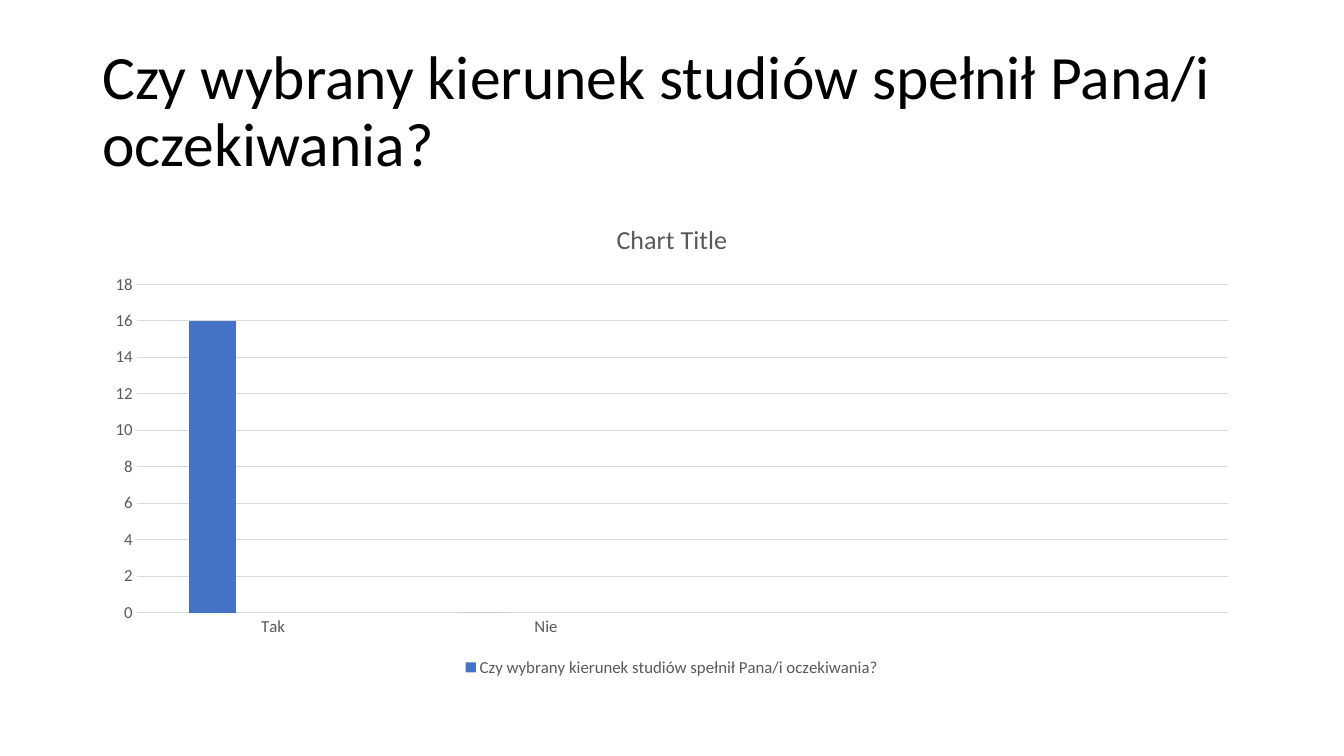
from lxml.etree import SubElement
from pptx import Presentation
from pptx.chart.data import CategoryChartData
from pptx.dml.color import RGBColor
from pptx.enum.chart import XL_CHART_TYPE, XL_LEGEND_POSITION, XL_TICK_MARK
from pptx.enum.text import MSO_ANCHOR
from pptx.oxml.ns import qn
from pptx.util import Emu, Pt

BLACK = RGBColor(0x00, 0x00, 0x00)
GRAY = RGBColor(0x59, 0x59, 0x59)
LIGHT_GRAY = RGBColor(0xD9, 0xD9, 0xD9)
BLUE = RGBColor(0x44, 0x72, 0xC4)
ORANGE = RGBColor(0xED, 0x7D, 0x31)
SILVER = RGBColor(0xA5, 0xA5, 0xA5)

FONT = "Calibri"
QUESTION = "Czy wybrany kierunek studiów spełnił Pana/i oczekiwania?"
CHART_TITLE = "Chart Title"
ANSWERS = ["Tak", "Nie", "", ""]
SERIES = [
    (QUESTION, [16, 0, None, None], BLUE),
    ("Series 2", [None] * 4, ORANGE),
    ("Series 3", [None] * 4, SILVER),
]
HIDDEN_IN_LEGEND = [1, 2]

EMU_PER_PX = 9525
SLIDE_SIZE = (1280, 720)
QUESTION_BOX = (88, 38, 1104, 139)
CHART_BOX = (88, 192, 1104, 457)


def px(lengths):
    return [Emu(length * EMU_PER_PX) for length in lengths]


def style_font(font, size, color):
    font.name = FONT
    font.size = Pt(size)
    font.bold = False
    font.color.rgb = color


def style_line(line):
    line.color.rgb = LIGHT_GRAY
    line.width = Pt(0.75)


def add_question(slide):
    frame = slide.shapes.add_textbox(*px(QUESTION_BOX)).text_frame
    frame.word_wrap = True
    frame.vertical_anchor = MSO_ANCHOR.MIDDLE
    frame.text = QUESTION
    paragraph = frame.paragraphs[0]
    paragraph.line_spacing = 0.9
    style_font(paragraph.runs[0].font, 44, BLACK)


def add_legend(chart):
    chart.has_legend = True
    legend = chart.legend
    legend.position = XL_LEGEND_POSITION.BOTTOM
    legend.include_in_layout = False
    style_font(legend.font, 12, GRAY)
    position = legend._element.find(qn("c:legendPos"))
    for index in reversed(HIDDEN_IN_LEGEND):
        entry = SubElement(legend._element, qn("c:legendEntry"))
        SubElement(entry, qn("c:idx")).set("val", str(index))
        SubElement(entry, qn("c:delete")).set("val", "1")
        position.addnext(entry)


def add_answer_chart(slide):
    answers = CategoryChartData()
    answers.categories = ANSWERS
    for name, counts, _ in SERIES:
        answers.add_series(name, counts)
    chart = slide.shapes.add_chart(
        XL_CHART_TYPE.COLUMN_CLUSTERED, *px(CHART_BOX), answers).chart
    style_font(chart.font, 10, BLACK)

    chart.has_title = True
    heading = chart.chart_title.text_frame
    heading.text = CHART_TITLE
    style_font(heading.paragraphs[0].runs[0].font, 18.6, GRAY)
    chart.chart_title.include_in_layout = False

    plot = chart.plots[0]
    plot.gap_width = 219
    plot.overlap = -27
    plot.vary_by_categories = False
    for series, (_, _, color) in zip(plot.series, SERIES):
        series.format.fill.solid()
        series.format.fill.fore_color.rgb = color

    for axis in (chart.category_axis, chart.value_axis):
        axis.major_tick_mark = XL_TICK_MARK.NONE
        axis.minor_tick_mark = XL_TICK_MARK.NONE
        style_font(axis.tick_labels.font, 12, GRAY)
    style_line(chart.category_axis.format.line)
    counts_axis = chart.value_axis
    counts_axis.format.line.fill.background()
    counts_axis.minimum_scale = 0
    counts_axis.maximum_scale = 18
    counts_axis.major_unit = 2
    style_line(counts_axis.major_gridlines.format.line)
    add_legend(chart)


def main():
    presentation = Presentation()
    presentation.slide_width, presentation.slide_height = px(SLIDE_SIZE)
    slide = presentation.slides.add_slide(presentation.slide_layouts[6])
    add_question(slide)
    add_answer_chart(slide)
    presentation.save("out.pptx")


if __name__ == "__main__":
    main()
